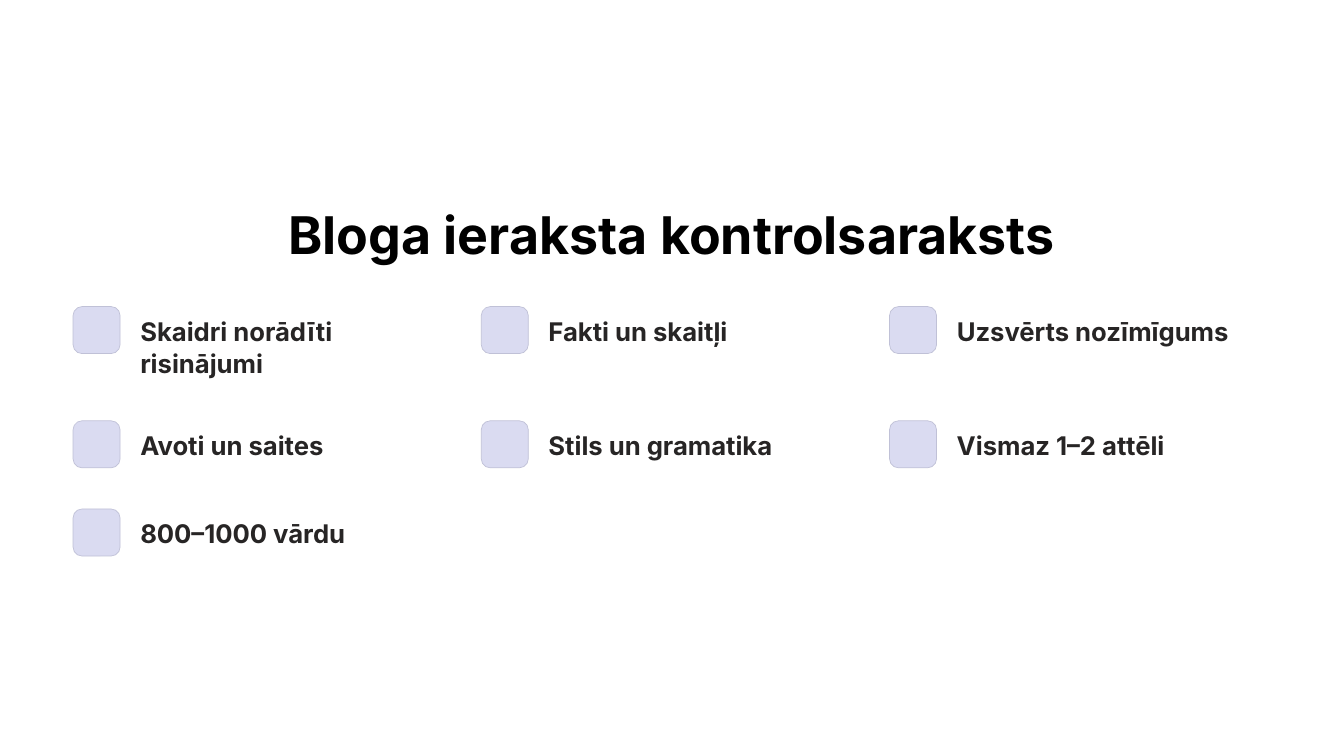
from dataclasses import dataclass

from pptx import Presentation
from pptx.dml.color import RGBColor
from pptx.enum.shapes import MSO_SHAPE
from pptx.enum.text import MSO_ANCHOR, MSO_AUTO_SIZE, PP_ALIGN
from pptx.slide import Slide
from pptx.text.text import TextFrame
from pptx.util import Inches, Pt

ROUNDED = MSO_SHAPE.ROUNDED_RECTANGLE
TOP = MSO_ANCHOR.TOP
NO_AUTOFIT = MSO_AUTO_SIZE.NONE
LEFT, CENTER = PP_ALIGN.LEFT, PP_ALIGN.CENTER

COLORS = {
    "background": "FFFFFF",
    "title": "000000",
    "label": "272525",
    "checkbox": "DADBF1",
    "border": "C0C1D7",
}
FONT = "Inter"

COLUMN_COUNT = 3
FIRST_COLUMN = 0.87
COLUMN_STEP = 4.86
ROW_TOPS = (3.65, 5.01, 6.06)
CHECKBOX_SIZE = 0.56
LABEL_OFFSET_X, LABEL_OFFSET_Y = 0.8, 0.09


@dataclass
class ChecklistItem:
    text: str
    width: float = 3.1
    height: float = 0.39
    wrap: bool = False


ITEMS = (
    ChecklistItem("Skaidri norādīti risinājumi", width=3.74, height=0.78, wrap=True),
    ChecklistItem("Fakti un skaitļi"),
    ChecklistItem("Uzsvērts nozīmīgums", width=3.29),
    ChecklistItem("Avoti un saites"),
    ChecklistItem("Stils un gramatika"),
    ChecklistItem("Vismaz 1–2 attēli"),
    ChecklistItem("800–1000 vārdu"),
)


def color(name: str) -> RGBColor:
    return RGBColor.from_string(COLORS[name])


def write_text(frame: TextFrame, text: str, *, size: float, spacing: float,
               color_name: str, align: PP_ALIGN = LEFT, wrap: bool = False) -> None:
    frame.margin_left = frame.margin_right = 0
    frame.margin_top = frame.margin_bottom = 0
    frame.auto_size = NO_AUTOFIT
    frame.vertical_anchor = TOP
    frame.word_wrap = wrap
    para = frame.paragraphs[0]
    para.alignment = align
    para.line_spacing = Pt(spacing)
    para.space_before = Pt(0)
    span = para.add_run()
    span.text = text
    span.font.name = FONT
    span.font.size = Pt(size)
    span.font.bold = True
    span.font.color.rgb = color(color_name)


def add_title(page: Slide, text: str) -> None:
    title = page.shapes.title
    title.left, title.top = Inches(3.42), Inches(2.38)
    title.width, title.height = Inches(9.16), Inches(0.78)
    write_text(title.text_frame, text, size=44.5, spacing=55.5,
               color_name="title", align=CENTER)


def add_checkbox(page: Slide, left: float, top: float) -> None:
    box = page.shapes.add_shape(ROUNDED, Inches(left), Inches(top),
                                Inches(CHECKBOX_SIZE), Inches(CHECKBOX_SIZE))
    box.adjustments[0] = 0.19
    box.shadow.inherit = False
    box.fill.solid()
    box.fill.fore_color.rgb = color("checkbox")
    box.line.color.rgb = color("border")
    box.line.width = Pt(0.6)


def add_item(page: Slide, item: ChecklistItem, left: float, top: float) -> None:
    add_checkbox(page, left, top)
    label = page.shapes.add_textbox(
        Inches(left + LABEL_OFFSET_X), Inches(top + LABEL_OFFSET_Y),
        Inches(item.width), Inches(item.height))
    write_text(label.text_frame, item.text, size=22, spacing=27.5,
               color_name="label", wrap=item.wrap)


def main() -> None:
    deck = Presentation()
    deck.slide_width, deck.slide_height = Inches(16), Inches(9)
    page = deck.slides.add_slide(deck.slide_layouts.get_by_name("Title Only"))
    page.background.fill.solid()
    page.background.fill.fore_color.rgb = color("background")

    add_title(page, "Bloga ieraksta kontrolsaraksts")
    for index, item in enumerate(ITEMS):
        row, column = divmod(index, COLUMN_COUNT)
        add_item(page, item, FIRST_COLUMN + column * COLUMN_STEP, ROW_TOPS[row])

    deck.save("out.pptx")


if __name__ == "__main__":
    main()
